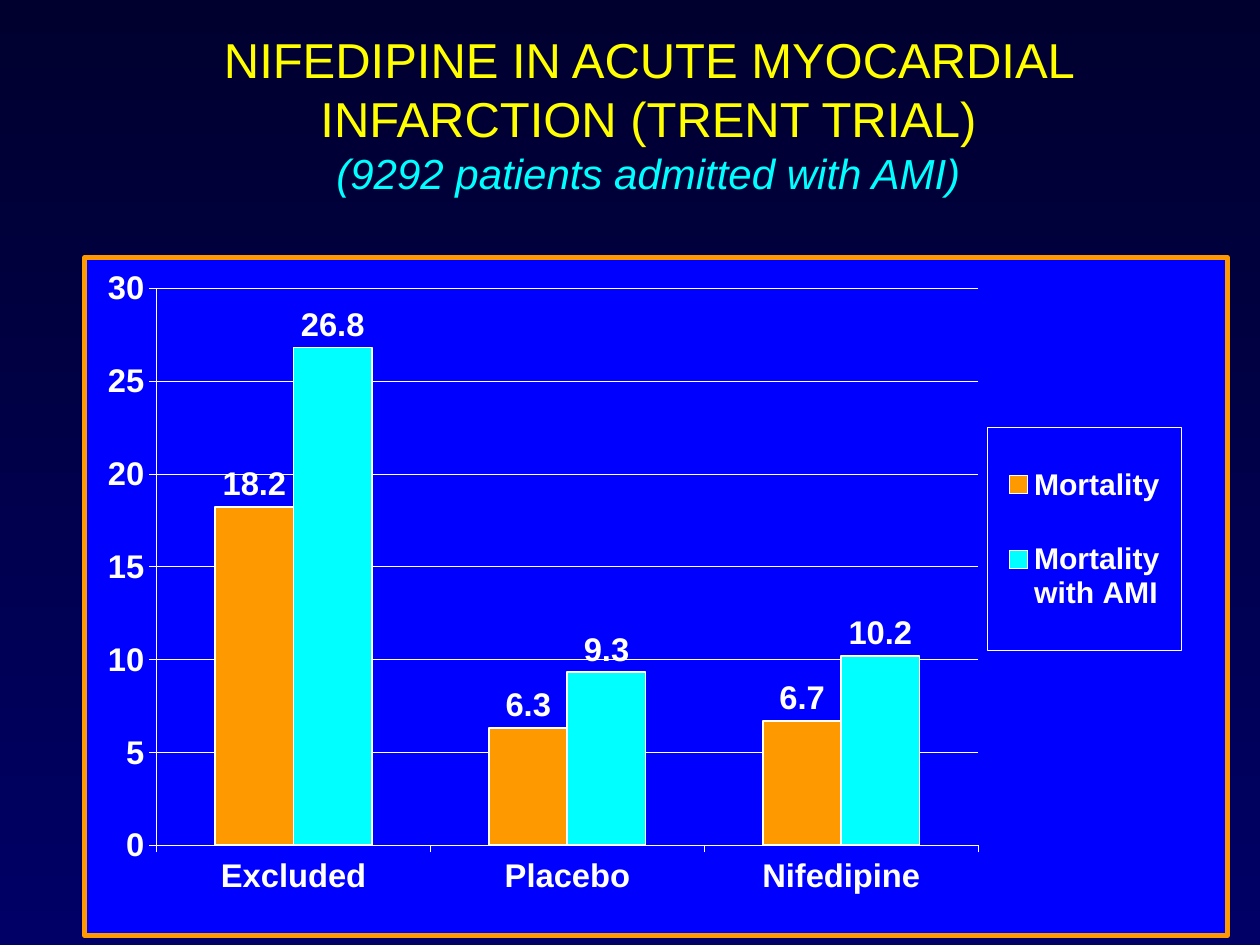
from lxml import etree
from pptx import Presentation
from pptx import util as u
from pptx.chart.data import CategoryChartData
from pptx.dml.color import RGBColor
from pptx.enum import chart as ch, text as t
from pptx.oxml import parse_xml
from pptx.oxml.ns import nsdecls, qn

PX = 914400 / 126
FONT = "Arial"
WHITE, YELLOW, CYAN, ORANGE, BLUE = "FFFFFF", "FFFF00", "00FFFF", "FF9900", "0000FF"


def px(length):
    return u.Emu(round(length * PX))


def colour(value):
    return RGBColor.from_string(value)


def format_font(font, size, fill, bold=False, italic=False):
    font.name = FONT
    font.size = u.Pt(size)
    font.bold = bold
    font.italic = italic
    font.color.rgb = colour(fill)


def add_text(paragraph, wording, **style):
    run = paragraph.add_run()
    run.text = wording
    format_font(run.font, **style)


def set_line(line, fill, width):
    line.color.rgb = colour(fill)
    line.width = u.Pt(width)


def frame_xml(border, width, fill=None):
    inside = f'<a:solidFill><a:srgbClr val="{fill}"/></a:solidFill>' if fill else "<a:noFill/>"
    return parse_xml(
        f'<c:spPr {nsdecls("c", "a")}>{inside}<a:ln w="{u.Pt(width)}"><a:solidFill>'
        f'<a:srgbClr val="{border}"/></a:solidFill></a:ln></c:spPr>')


def layout_xml(x, y, w, h, inner=False):
    layout = parse_xml(f'<c:layout {nsdecls("c")}><c:manualLayout/></c:layout>')
    settings = {"xMode": "edge", "yMode": "edge", "x": x, "y": y, "w": w, "h": h}
    if inner:
        settings = {"layoutTarget": "inner", **settings}
    for tag, value in settings.items():
        etree.SubElement(layout[0], qn(f"c:{tag}")).set("val", str(value))
    return layout


def drop_layout(parent):
    for old in parent.findall(qn("c:layout")):
        parent.remove(old)


def paint_background(slide):
    fill = slide.background.fill
    fill.gradient()
    fill.gradient_angle = 270
    for stop, shade in zip(fill.gradient_stops, ("00002F", "000066")):
        stop.color.rgb = colour(shade)


def place_title(slide, left, top, width, height):
    title = slide.shapes.title
    title.left, title.top, title.width, title.height = map(px, (left, top, width, height))
    frame = title.text_frame
    frame.word_wrap = True
    frame.auto_size = t.MSO_AUTO_SIZE.NONE
    frame.vertical_anchor = t.MSO_ANCHOR.MIDDLE
    heading = frame.paragraphs[0]
    heading.alignment = t.PP_ALIGN.CENTER
    add_text(heading, "NIFEDIPINE IN ACUTE MYOCARDIAL INFARCTION (TRENT TRIAL)",
             size=28, fill=YELLOW)
    heading.add_line_break()
    add_text(heading, "(9292 patients admitted with AMI)", size=24, fill=CYAN, italic=True)


def format_axes(chart):
    for axis in (chart.category_axis, chart.value_axis):
        axis.major_tick_mark = ch.XL_TICK_MARK.OUTSIDE
        axis.minor_tick_mark = ch.XL_TICK_MARK.NONE
        format_font(axis.tick_labels.font, 18.8, WHITE, bold=True)
        set_line(axis.format.line, WHITE, 0.25)
    chart.category_axis.tick_label_position = ch.XL_TICK_LABEL_POSITION.LOW
    scale = chart.value_axis
    scale.minimum_scale, scale.maximum_scale, scale.major_unit = 0, 30, 5
    set_line(scale.major_gridlines.format.line, WHITE, 0.25)


def format_bars(plot):
    plot.gap_width = 150
    plot.overlap = 0
    plot.vary_by_categories = False
    for bars, fill in zip(plot.series, (ORANGE, CYAN)):
        bars.format.fill.solid()
        bars.format.fill.fore_color.rgb = colour(fill)
        set_line(bars.format.line, WHITE, 1.05)
        labels = bars.data_labels
        labels.show_value = True
        labels.position = ch.XL_LABEL_POSITION.OUTSIDE_END
        format_font(labels.font, 18.8, WHITE, bold=True)


def format_legend(chart):
    chart.has_legend = True
    legend = chart.legend
    legend.position = ch.XL_LEGEND_POSITION.RIGHT
    legend.include_in_layout = False
    format_font(legend.font, 17.3, WHITE, bold=True)
    element = chart._chartSpace.chart.find(qn("c:legend"))
    drop_layout(element)
    element.find(qn("c:legendPos")).addnext(layout_xml(0.79, 0.25, 0.17, 0.33))
    element.find(qn("c:overlay")).addnext(frame_xml(WHITE, 0.25))


def place_mortality_chart(slide, left, top, width, height):
    mortality = CategoryChartData(number_format="General")
    mortality.categories = ["Excluded", "Placebo", "Nifedipine"]
    mortality.add_series("Mortality", (18.2, 6.3, 6.7))
    mortality.add_series("Mortality with AMI", (26.8, 9.3, 10.2))
    chart = slide.shapes.add_chart(
        ch.XL_CHART_TYPE.COLUMN_CLUSTERED, *map(px, (left, top, width, height)), mortality).chart
    chart.has_title = False
    format_font(chart.font, 18.8, WHITE, bold=True)
    format_axes(chart)
    format_bars(chart.plots[0])
    format_legend(chart)
    root = chart._chartSpace
    plot_area = root.chart.plotArea
    drop_layout(plot_area)
    plot_area.insert(0, layout_xml(0.063, 0.045, 0.719, 0.822, inner=True))
    root.chart.addnext(frame_xml(ORANGE, 3, BLUE))


def main():
    deck = Presentation()
    deck.slide_width, deck.slide_height = px(1260), px(945)
    slide = deck.slides.add_slide(deck.slide_layouts[5])
    paint_background(slide)
    place_title(slide, 113, 35, 1071, 158)
    place_mortality_chart(slide, 82, 255, 1148, 683)
    deck.save("out.pptx")


if __name__ == "__main__":
    main()
